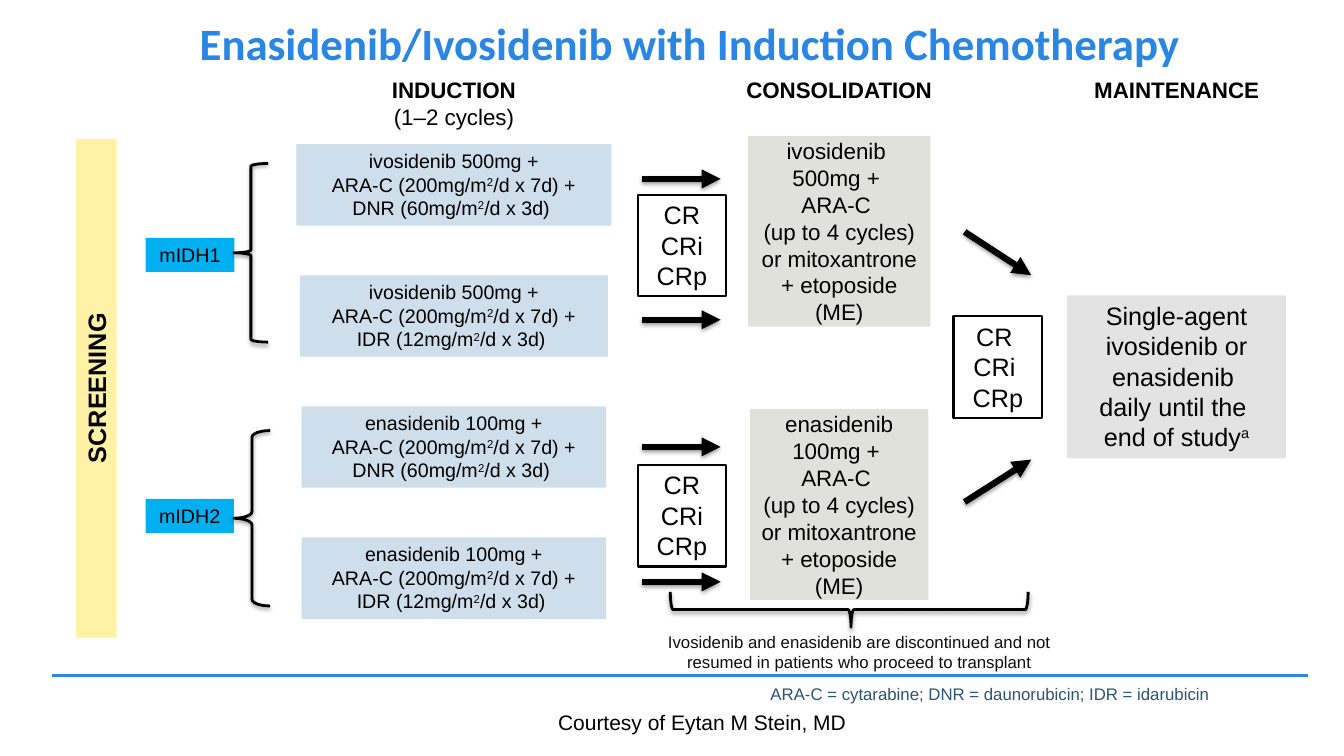
from pptx import Presentation
from pptx.dml.color import RGBColor
from pptx.enum.shapes import MSO_CONNECTOR, MSO_SHAPE
from pptx.enum.text import MSO_ANCHOR, MSO_AUTO_SIZE, PP_ALIGN
from pptx.oxml import parse_xml
from pptx.oxml.ns import nsdecls
from pptx.util import Pt

RECTANGLE, LEFT_BRACE = MSO_SHAPE.RECTANGLE, MSO_SHAPE.LEFT_BRACE
STRAIGHT = MSO_CONNECTOR.STRAIGHT
TOP, MIDDLE = MSO_ANCHOR.TOP, MSO_ANCHOR.MIDDLE
LEFT, CENTER = PP_ALIGN.LEFT, PP_ALIGN.CENTER

BLACK, BLUE = "000000", "2986E2"
NO_EFFECT = f'<a:effectLst {nsdecls("a")}/>'
SOFT_SHADOW = (
    f'<a:effectLst {nsdecls("a")}><a:outerShdw blurRad="39370" dist="20320" '
    'dir="5400000" rotWithShape="0"><a:srgbClr val="000000">'
    '<a:alpha val="38000"/></a:srgbClr></a:outerShdw></a:effectLst>'
)
ARROWHEAD = f'<a:tailEnd {nsdecls("a")} type="triangle"/>'


def paint(target, color):
    """Give a fill, or a line's fill, one solid colour."""
    target.solid()
    target.fore_color.rgb = RGBColor.from_string(color)


def write(box, text, size, color=BLACK, bold=False, align=CENTER,
          anchor=TOP, name="Arial", wrap=True):
    """Fill a box: newline = paragraph, \\v = line break, ^...^ = superscript."""
    frame = box.text_frame
    frame_format = {"word_wrap": wrap, "auto_size": MSO_AUTO_SIZE.NONE,
                    "vertical_anchor": anchor}
    for key, value in frame_format.items():
        setattr(frame, key, value)
    for index, content in enumerate(text.split("\n")):
        para = frame.add_paragraph() if index else frame.paragraphs[0]
        para.alignment = align
        for part, piece in enumerate(content.split("^")):
            for row, words in enumerate(piece.split("\v")):
                if row:
                    para.add_line_break()
                if not words:
                    continue
                span = para.add_run()
                span.text = words
                for key, value in {"name": name, "size": Pt(size), "bold": bold}.items():
                    setattr(span.font, key, value)
                paint(span.font.fill, color)
                if part % 2:
                    span.font._element.set("baseline", "30000")


deck = Presentation()
deck.slide_width, deck.slide_height = Pt(960), Pt(540)
page = deck.slides.add_slide(deck.slide_layouts[5])
shapes = page.shapes

# Title
title = shapes.title
title.left, title.top, title.width, title.height = Pt(26), Pt(4.3), Pt(934), Pt(51.8)
write(title, "Enasidenib/Ivosidenib with Induction Chemotherapy", 32, BLUE,
      bold=True, anchor=MIDDLE, name="Calibri")

# Filled boxes: text, left, top, width, height, fill, size, anchor
boxes = [
    ("mIDH1", 104, 170, 63.5, 24.2, "00B0F0", 14, TOP),
    ("mIDH2", 104, 356.4, 63, 24.2, "00B0F0", 14, TOP),
    ("ivosidenib \n500mg + \nARA-C \n(up to 4 cycles)\nor mitoxantrone + etoposide (ME)",
     534.4, 97, 130.2, 136.3, "E1E1DB", 16, MIDDLE),
    ("enasidenib 100mg + \nARA-C \n(up to 4 cycles) or mitoxantrone + etoposide (ME)",
     535.6, 292.2, 127.6, 136.3, "E1E1DB", 16, MIDDLE),
    ("Single-agent ivosidenib or enasidenib \vdaily until the \vend of study^a^",
     762.3, 211, 156.2, 116.5, "E3E3E3", 18, TOP),
]

# Induction arms: evenly spaced and centred on one axis
arms = [("ivosidenib 500mg", "DNR (60mg", 225), ("ivosidenib 500mg", "IDR (12mg", 220),
        ("enasidenib 100mg", "DNR (60mg", 217.5), ("enasidenib 100mg", "IDR (12mg", 217.5)]
for index, (inhibitor, anthracycline, width) in enumerate(arms):
    regimen = f"{inhibitor} +\nARA-C (200mg/m^2^/d x 7d) +\n{anthracycline}/m^2^/d x 3d) "
    boxes.append((regimen, 324.2 - width / 2, 103 + 93.6 * index, width, 58.2,
                  "CEDEEB", 14, TOP))

for text, left, top, width, height, fill, size, anchor in boxes:
    box = shapes.add_shape(RECTANGLE, Pt(left), Pt(top), Pt(width), Pt(height))
    box.shadow.inherit = False
    paint(box.fill, fill)
    box.line.fill.background()
    write(box, text, size, anchor=anchor)

# Screening bar
screening = shapes.add_shape(RECTANGLE, Pt(-109.4), Pt(262.8), Pt(356.4), Pt(29))
screening.rotation = 270
screening.shadow.inherit = False
paint(screening.fill, "FFF1A6")
screening.line.fill.background()
write(screening, "SCREENING", 18, bold=True)

# Response boxes
for text, left, top, width in [("CR CRi CRp", 455.8, 139, 62.6),
                               ("CR CRi CRp", 455.8, 332, 62.6),
                               ("CR \nCRi \nCRp", 681.1, 226, 63.4)]:
    response = shapes.add_shape(RECTANGLE, Pt(left), Pt(top), Pt(width), Pt(72.7))
    response.shadow.inherit = False
    response.fill.background()
    paint(response.line.fill, BLACK)
    response.line.width = Pt(1.5)
    write(response, text, 18)

# Braces: left, top, width, height, rotation, curve, point
for left, top, width, height, rotation, curve, point in [
        (167, 116.8, 24.5, 127.6, 0, 0.083, 0.5),
        (167, 307.6, 26, 125.3, 0, 0.184, 0.5),
        (594, 307.6, 25.2, 255.6, 270, 0.083, 0.505)]:
    brace = shapes.add_shape(LEFT_BRACE, Pt(left), Pt(top), Pt(width), Pt(height))
    brace.rotation = rotation
    brace.adjustments[0], brace.adjustments[1] = curve, point
    brace.fill.background()
    paint(brace.line.fill, BLACK)
    brace.line.width = Pt(2)
    brace._element.spPr.append(parse_xml(SOFT_SHADOW))

# Arrows: two per induction pair, then two towards maintenance
arrows = [(458.6, y, 514.8, y) for y in (127.8, 228.4, 319.2, 415.6)]
arrows += [(689, 165.6, 736.6, 196.6), (689, 358.6, 736.6, 328.3)]
for x1, y1, x2, y2 in arrows:
    arrow = shapes.add_connector(STRAIGHT, Pt(x1), Pt(y1), Pt(x2), Pt(y2))
    paint(arrow.line.fill, BLACK)
    arrow.line.width = Pt(4.5)
    arrow.line._get_or_add_ln().append(parse_xml(ARROWHEAD))
    arrow._element.spPr.append(parse_xml(SOFT_SHADOW))

# Footer rule
rule = shapes.add_connector(STRAIGHT, Pt(37.4), Pt(482.4), Pt(934.6), Pt(482.4))
paint(rule.line.fill, BLUE)
rule.line.width = Pt(2.25)
rule._element.spPr.append(parse_xml(NO_EFFECT))

# Column headings and notes: text, left, top, width, height, format
heading = {"size": 16, "bold": True}
labels = [
    ("INDUCTION", 231.8, 51, 185, 27, heading),
    ("CONSOLIDATION", 525.6, 51, 147.6, 27, heading),
    ("MAINTENANCE", 762.5, 51, 156.2, 27, heading),
    ("Ivosidenib and enasidenib are discontinued and not resumed in patients "
     "who proceed to transplant", 459.4, 447.8, 308.9, 36, {"size": 12, "color": "0D0D0D"}),
    ("ARA-C = cytarabine; DNR = daunorubicin; IDR = idarubicin", 543.3, 483.8, 391.3, 23,
     {"size": 12, "color": "2C546E", "align": LEFT, "anchor": MIDDLE}),
    ("Courtesy of\u00a0Eytan M Stein, MD", 391.5, 503.3, 222.5, 25.2,
     {"size": 15, "align": LEFT, "wrap": False}),
]
labels[0] = ("INDUCTION\n(1–2 cycles)", 231.8, 51, 185, 46, heading)
for text, left, top, width, height, style in labels:
    label = shapes.add_textbox(Pt(left), Pt(top), Pt(width), Pt(height))
    write(label, text, **style)
    for para in label.text_frame.paragraphs[1:]:
        para.runs[0].font.bold = False

deck.save("out.pptx")
